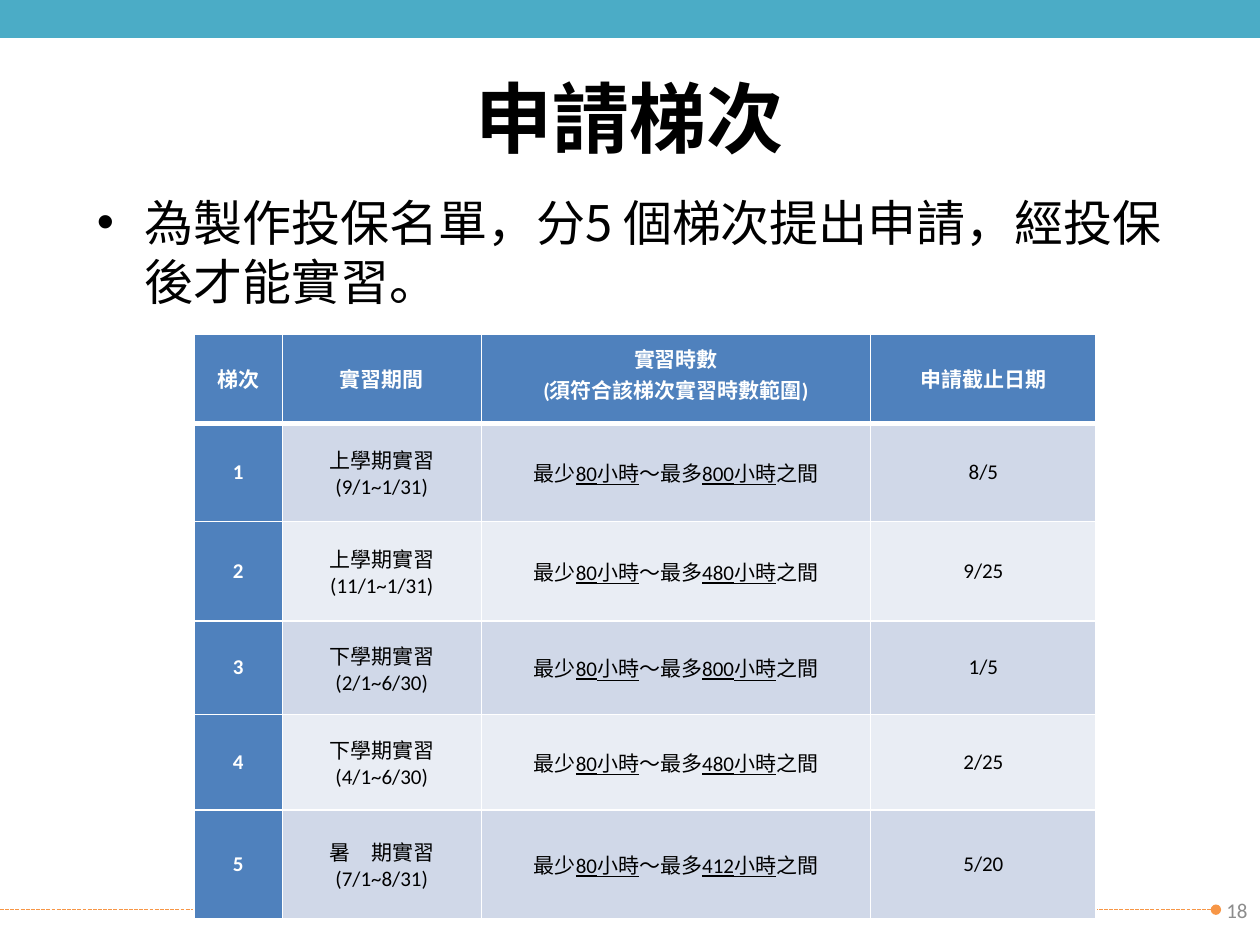
import pptx
import pptx.util
import pptx.dml.color
import pptx.enum.shapes
import pptx.enum.text
import pptx.oxml
import pptx.oxml.ns
import lxml.etree

Inches = pptx.util.Inches
Pt = pptx.util.Pt
ALIGN = pptx.enum.text.PP_ALIGN
MIDDLE = pptx.enum.text.MSO_ANCHOR.MIDDLE
qn = pptx.oxml.ns.qn
color = pptx.dml.color.RGBColor.from_string
CJK = "Noto Sans CJK SC"


def add_run(paragraph, text, size, hex_color, font="Calibri", bold=False, underline=False):
    run = paragraph.add_run()
    run.text = text
    run.font.size = Pt(size)
    run.font.name = font
    run.font.bold = bold
    run.font.underline = underline
    run.font.color.rgb = color(hex_color)
    east_asian = lxml.etree.SubElement(run.font._element, qn("a:ea"))
    east_asian.set("typeface", CJK)


def add_text_box(left, top, width, height, anchor):
    frame = slide.shapes.add_textbox(
        Inches(left), Inches(top), Inches(width), Inches(height)).text_frame
    frame.word_wrap = True
    frame.vertical_anchor = anchor
    return frame


presentation = pptx.Presentation()
presentation.slide_width = Inches(10)
presentation.slide_height = Inches(7.5)
slide = presentation.slides.add_slide(presentation.slide_layouts[6])

# Dashed footer line ending in a dot
footer_line = slide.shapes.add_connector(
    pptx.enum.shapes.MSO_CONNECTOR.STRAIGHT,
    Inches(0), Inches(7.22), Inches(9.65), Inches(7.22))
footer_line.line.color.rgb = color("F79646")
footer_line.line.width = Pt(0.75)
line_element = footer_line.line._get_or_add_ln()
lxml.etree.SubElement(line_element, qn("a:prstDash")).set("val", "sysDash")
lxml.etree.SubElement(line_element, qn("a:tailEnd")).set("type", "oval")
lxml.etree.SubElement(footer_line._element.spPr, qn("a:effectLst"))

# Top band
band = slide.shapes.add_shape(
    pptx.enum.shapes.MSO_SHAPE.RECTANGLE, Inches(0), Inches(0), Inches(10), Inches(0.29))
band.shadow.inherit = False
band.fill.solid()
band.fill.fore_color.rgb = color("4BACC6")
band.line.color.rgb = color("4BACC6")
band.line.width = Pt(2)

# Title
paragraph = add_text_box(0.5, 0.3, 9, 1.25, MIDDLE).paragraphs[0]
paragraph.alignment = ALIGN.CENTER
add_run(paragraph, "申請梯次", 44, "000000", CJK, bold=True)

# Table contents: each cell is a list of paragraphs, each a list of (text, underline)
headers = [["梯次"], ["實習期間"], ["實習時數", "(須符合該梯次實習時數範圍)"], ["申請截止日期"]]
batches = [
    ("上學期實習(9/1~1/31)", 800, "8/5"),
    ("上學期實習(11/1~1/31)", 480, "9/25"),
    ("下學期實習(2/1~6/30)", 800, "1/5"),
    ("下學期實習(4/1~6/30)", 480, "2/25"),
    ("暑　期實習(7/1~8/31)", 412, "5/20"),
]
rows = [[[[(text, False)] for text in cell] for cell in headers]]
for number, (period, hours, deadline) in enumerate(batches, 1):
    limits = [("最少", False), ("80小時", True), ("～最多", False),
              (f"{hours}小時", True), ("之間", False)]
    rows.append([[[(str(number), False)]], [[(period, False)]], [limits],
                 [[(deadline, False)]]])

# Table grid
column_widths = [0.7, 1.58, 3.09, 1.79]
row_heights = [0.71, 0.78, 0.79, 0.74, 0.76, 0.86]
table = slide.shapes.add_table(
    len(rows), len(column_widths), Inches(1.54), Inches(2.65),
    Inches(sum(column_widths)), Inches(sum(row_heights))).table
for column, width in zip(table.columns, column_widths):
    column.width = Inches(width)
for row, height in zip(table.rows, row_heights):
    row.height = Inches(height)

# Table cells
for row_index, row in enumerate(rows):
    for column_index, paragraphs in enumerate(row):
        cell = table.cell(row_index, column_index)
        cell.vertical_anchor = MIDDLE
        cell.margin_left = cell.margin_right = Inches(0.07)
        cell.margin_top = cell.margin_bottom = 0
        is_heading = row_index == 0 or column_index == 0
        for index, runs in enumerate(paragraphs):
            frame = cell.text_frame
            paragraph = frame.add_paragraph() if index else frame.paragraphs[0]
            paragraph.alignment = ALIGN.CENTER
            if len(paragraphs) > 1 and index == 0:
                paragraph.line_spacing = Pt(12)
            if column_index == 2 and row_index > 1:
                paragraph.space_before = Pt(3.6)
                properties = paragraph._p.get_or_add_pPr()
                properties.set("marL", str(Inches(0.17)))
                properties.set("indent", str(-Inches(0.17)))
            for text, underline in runs:
                add_run(paragraph, text, 12, "FFFFFF" if is_heading else "000000",
                        bold=is_heading, underline=underline)
        # White borders, thicker under the header
        cell_properties = cell._tc.get_or_add_tcPr()
        for side in ("L", "R", "T", "B"):
            thick = (row_index, side) in ((0, "B"), (1, "T"))
            border = lxml.etree.SubElement(cell_properties, qn(f"a:ln{side}"))
            border.set("w", str(Pt(3 if thick else 1)))
            border_fill = lxml.etree.SubElement(border, qn("a:solidFill"))
            lxml.etree.SubElement(border_fill, qn("a:srgbClr")).set("val", "FFFFFF")
        cell.fill.solid()
        band_color = "D0D8E8" if row_index % 2 else "E9EDF4"
        cell.fill.fore_color.rgb = color("4F81BD" if is_heading else band_color)

# Slide number
paragraph = add_text_box(7.67, 7.02, 2.33, 0.4, MIDDLE).paragraphs[0]
paragraph.alignment = ALIGN.RIGHT
add_run(paragraph, "18", 12, "8C8C8C")

# Bulleted explanation
paragraph = add_text_box(0.67, 1.48, 8.83, 1.04, pptx.enum.text.MSO_ANCHOR.TOP).paragraphs[0]
properties = paragraph._p.get_or_add_pPr()
properties.set("marL", str(Inches(0.38)))
properties.set("indent", str(-Inches(0.38)))
space_before = lxml.etree.SubElement(properties, qn("a:spcBef"))
lxml.etree.SubElement(space_before, qn("a:spcPct")).set("val", "20000")
lxml.etree.SubElement(properties, qn("a:buFont")).set("typeface", "Arial")
lxml.etree.SubElement(properties, qn("a:buChar")).set("char", "•")
add_run(paragraph, "為製作投保名單，分5 個梯次提出申請，經投保後才能實習。", 28, "000000", CJK)

presentation.save("out.pptx")
